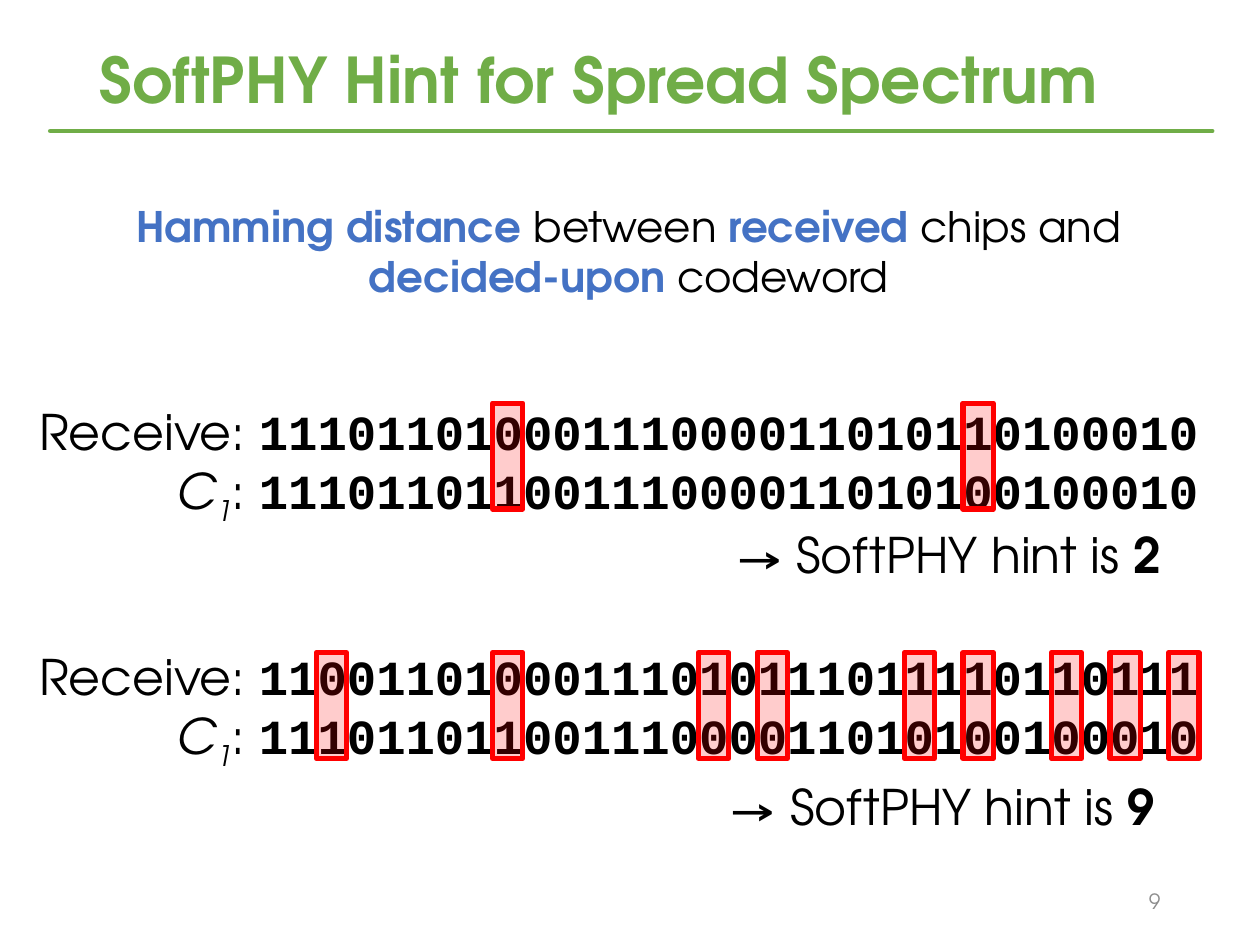
from lxml.etree import SubElement
from pptx import Presentation
from pptx.dml.color import RGBColor
from pptx.enum.shapes import MSO_CONNECTOR, MSO_SHAPE
from pptx.enum.text import MSO_ANCHOR, MSO_AUTO_SIZE, PP_ALIGN
from pptx.oxml.ns import qn
from pptx.util import Inches, Pt

GREEN = RGBColor(0x70, 0xAD, 0x47)
BLUE = RGBColor(0x44, 0x72, 0xC4)
RED = RGBColor(0xFF, 0x00, 0x00)
GRAY = RGBColor(0x8C, 0x8C, 0x8C)
BLACK = RGBColor(0x00, 0x00, 0x00)
BODY_FONT = "TeX Gyre Adventor"
CHIP_FONT = "Courier New"

CODEWORD = "11101101100111000011010100100010"
CHIP_SIZE = 28
CHIP_PITCH = CHIP_SIZE * 0.6 / 72  # Courier New characters are 0.6 em wide


def add_run(paragraph, text, size=28, font=BODY_FONT, color=BLACK,
            bold=False, italic=False, baseline=0):
    run = paragraph.add_run()
    run.text = text
    run.font.name = font
    run.font.size = Pt(size)
    run.font.color.rgb = color
    run.font.bold = bold
    run.font.italic = italic
    if baseline:
        run.font._element.set("baseline", str(baseline * 1000))


def add_text_box(shapes, box, lines, align=PP_ALIGN.RIGHT, wrap=True,
                 anchor=MSO_ANCHOR.TOP, auto_size=MSO_AUTO_SIZE.SHAPE_TO_FIT_TEXT):
    """Each line is a list of (text, format) pairs."""
    frame = shapes.add_textbox(*map(Inches, box)).text_frame
    frame.word_wrap = wrap
    frame.auto_size = auto_size
    frame.vertical_anchor = anchor
    for index, runs in enumerate(lines):
        paragraph = frame.add_paragraph() if index else frame.paragraphs[0]
        paragraph.alignment = align
        for text, text_format in runs:
            add_run(paragraph, text, **text_format)


def add_title(slide, box, text):
    title = slide.shapes.title
    title.left, title.top, title.width, title.height = map(Inches, box)
    frame = title.text_frame
    frame.auto_size = MSO_AUTO_SIZE.NONE
    frame.vertical_anchor = MSO_ANCHOR.MIDDLE
    paragraph = frame.paragraphs[0]
    paragraph.alignment = PP_ALIGN.LEFT
    paragraph.line_spacing = 0.9
    add_run(paragraph, text, size=36, color=GREEN, bold=True)


def add_title_rule(slide, left, right, top):
    rule = slide.shapes.add_connector(
        MSO_CONNECTOR.STRAIGHT, Inches(left), Inches(top), Inches(right), Inches(top))
    rule.line.color.rgb = GREEN
    rule.line.width = Pt(2.75)
    rule.line._ln.set("cap", "rnd")
    SubElement(rule._element.spPr, qn("a:effectLst"))


def add_definition(slide, box):
    term = {"size": 24, "color": BLUE, "bold": True}
    plain = {"size": 24}
    add_text_box(slide.shapes, box, [[
        ("Hamming distance ", term), ("between ", plain),
        ("received ", term), ("chips and ", plain),
        ("decided-upon ", term), ("codeword", plain),
    ]], align=PP_ALIGN.CENTER)


def add_mismatch_marker(shapes, box):
    marker = shapes.add_shape(MSO_SHAPE.RECTANGLE, *map(Inches, box))
    marker.shadow.inherit = False
    marker.fill.solid()
    marker.fill.fore_color.rgb = RED
    color = marker._element.spPr.find(qn("a:solidFill")).find(qn("a:srgbClr"))
    SubElement(color, qn("a:alpha")).set("val", "20000")
    marker.line.color.rgb = RED
    marker.line.width = Pt(3)


def add_comparison(slide, box, received, marker_top, hint_box):
    """Received chips over the codeword, with each differing chip marked and counted."""
    left, _, width, _ = box
    chips = {"font": CHIP_FONT, "bold": True}
    group = slide.shapes.add_group_shape()
    add_text_box(group.shapes, box, [
        [("Receive: ", {}), (received, chips)],
        [("C", {"italic": True}), ("1", {"italic": True, "baseline": -25}),
         (": ", {}), (CODEWORD, chips)],
    ], wrap=False)

    first_chip = left + width - 0.1 - len(CODEWORD) * CHIP_PITCH
    mismatches = [index for index, (chip, expected)
                  in enumerate(zip(received, CODEWORD)) if chip != expected]
    for index in mismatches:
        add_mismatch_marker(
            group.shapes, (first_chip + index * CHIP_PITCH, marker_top, 0.24, 0.84))

    add_text_box(slide.shapes, hint_box, [
        [("→ SoftPHY hint is ", {}), (str(len(mismatches)), {"bold": True})]])


def add_slide_number(slide, box, number):
    add_text_box(slide.shapes, box, [[(number, {"size": 12, "color": GRAY})]],
                 anchor=MSO_ANCHOR.MIDDLE, auto_size=MSO_AUTO_SIZE.NONE)


def main():
    presentation = Presentation()
    presentation.slide_width = Inches(10)
    presentation.slide_height = Inches(7.5)
    slide = presentation.slides.add_slide(presentation.slide_layouts.get_by_name("Title Only"))

    add_title_rule(slide, 0.4, 9.62, 1.04)
    add_slide_number(slide, (7.06, 6.95, 2.25, 0.4), "9")
    add_title(slide, (0.69, 0.29, 8.62, 0.74), "SoftPHY Hint for Spread Spectrum")
    add_comparison(slide, (0.12, 3.14, 9.49, 1.04), "11101101000111000011010110100010",
                   marker_top=3.2, hint_box=(5.37, 4.11, 3.94, 0.57))
    add_comparison(slide, (0.12, 5.08, 9.49, 1.04), "11001101000111010111011110110111",
                   marker_top=5.18, hint_box=(5.29, 6.11, 3.97, 0.57))
    add_definition(slide, (0.62, 1.54, 8.74, 0.91))

    presentation.save("out.pptx")


if __name__ == "__main__":
    main()
